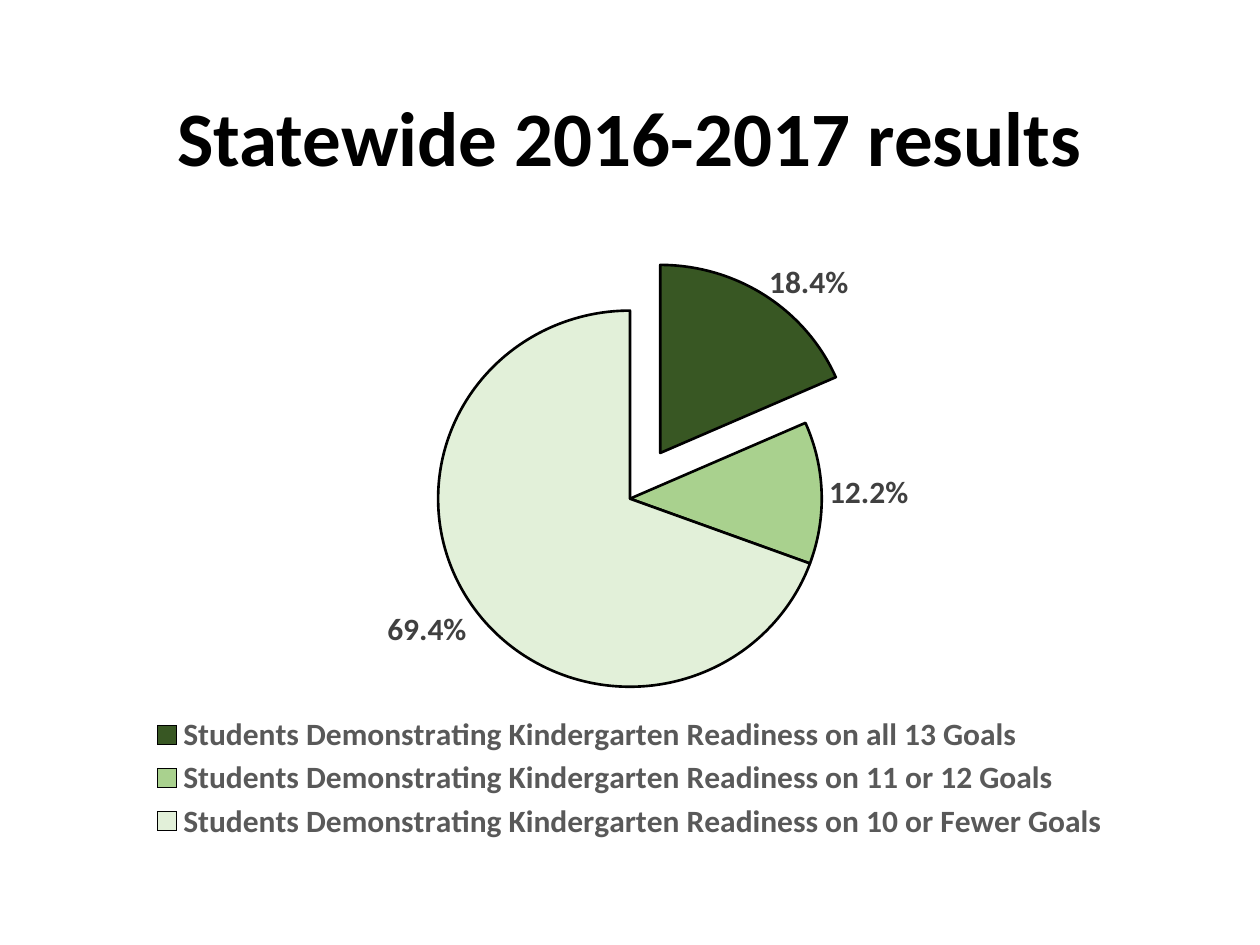
from lxml import etree
from pptx import Presentation
from pptx.chart.data import CategoryChartData
from pptx.dml.color import RGBColor as RGB
from pptx.enum.chart import XL_CHART_TYPE as CT, XL_LABEL_POSITION as LP, XL_LEGEND_POSITION as LEG
from pptx.enum.text import MSO_ANCHOR as MA, PP_ALIGN as PA
from pptx.oxml.ns import qn
from pptx.util import Pt

C = {"black": "000000", "legend": "595959", "label": "404040",
     "all": "385723", "most": "A9D18E", "fewer": "E2F0D9"}


def style(font, size, color, bold=True):
    font.name, font.size, font.bold = "Calibri", Pt(size), bold
    font.color.rgb = RGB.from_string(C[color])


def set_layout(parent, index, box, inner=False):
    for old in parent.findall(qn("c:layout")):
        parent.remove(old)
    layout = etree.Element(qn("c:layout"))
    manual = etree.SubElement(layout, qn("c:manualLayout"))
    items = [("layoutTarget", "inner")] if inner else []
    items += [("xMode", "edge"), ("yMode", "edge"), *zip("xywh", box)]
    for tag, val in items:
        etree.SubElement(manual, qn("c:" + tag)).set("val", str(val))
    parent.insert(index, layout)


prs = Presentation()
prs.slide_width, prs.slide_height = Pt(720), Pt(540)
s = prs.slides.add_slide(prs.slide_layouts[6])

# Title
tf = s.shapes.add_textbox(Pt(49.5), Pt(28.75), Pt(621), Pt(104.4)).text_frame
tf.word_wrap = True
tf.vertical_anchor = MA.MIDDLE
tf.text = "Statewide 2016-2017 results"
p = tf.paragraphs[0]
p.alignment = PA.CENTER
p.line_spacing = 0.9
style(p.runs[0].font, 44, "black")

# Pie chart
data = CategoryChartData(number_format="0.0")
data.categories = ["Students Demonstrating Kindergarten Readiness on " + goals
                   for goals in ("all 13 Goals", "11 or 12 Goals", "10 or Fewer Goals")]
data.add_series("Series 1", (18.4, 12.2, 69.4))
chart = s.shapes.add_chart(CT.PIE, Pt(49.5), Pt(144), Pt(621), Pt(342.6), data).chart
chart.has_title = False
style(chart.font, 10, "black", False)
set_layout(chart.plots[0]._element.getparent(), 0, (0.32, 0.08, 0.36, 0.64), inner=True)

# Slices, the first one pulled out
plot = chart.plots[0]
series = plot.series[0]
for i, name in enumerate(("all", "most", "fewer")):
    fmt = series.points[i].format
    fmt.fill.solid()
    fmt.fill.fore_color.rgb = RGB.from_string(C[name])
    fmt.line.color.rgb = RGB.from_string(C["black"])
    fmt.line.width = Pt(1.5)
explosion = etree.Element(qn("c:explosion"))
explosion.set("val", "29")
series._element.find(qn("c:dPt")).find(qn("c:spPr")).addprevious(explosion)

# Percentage labels
labels = series.data_labels
labels.show_value = False
labels.show_percentage = True
labels.number_format = "0.0%"
labels.number_format_is_linked = False
labels.position = LP.OUTSIDE_END
style(labels.font, 18, "label")

# Legend
chart.has_legend = True
legend = chart.legend
legend.position = LEG.BOTTOM
legend.include_in_layout = False
style(legend.font, 18, "legend")
set_layout(legend._element, 1, (0.05, 0.76, 0.9, 0.23))

prs.save("out.pptx")
